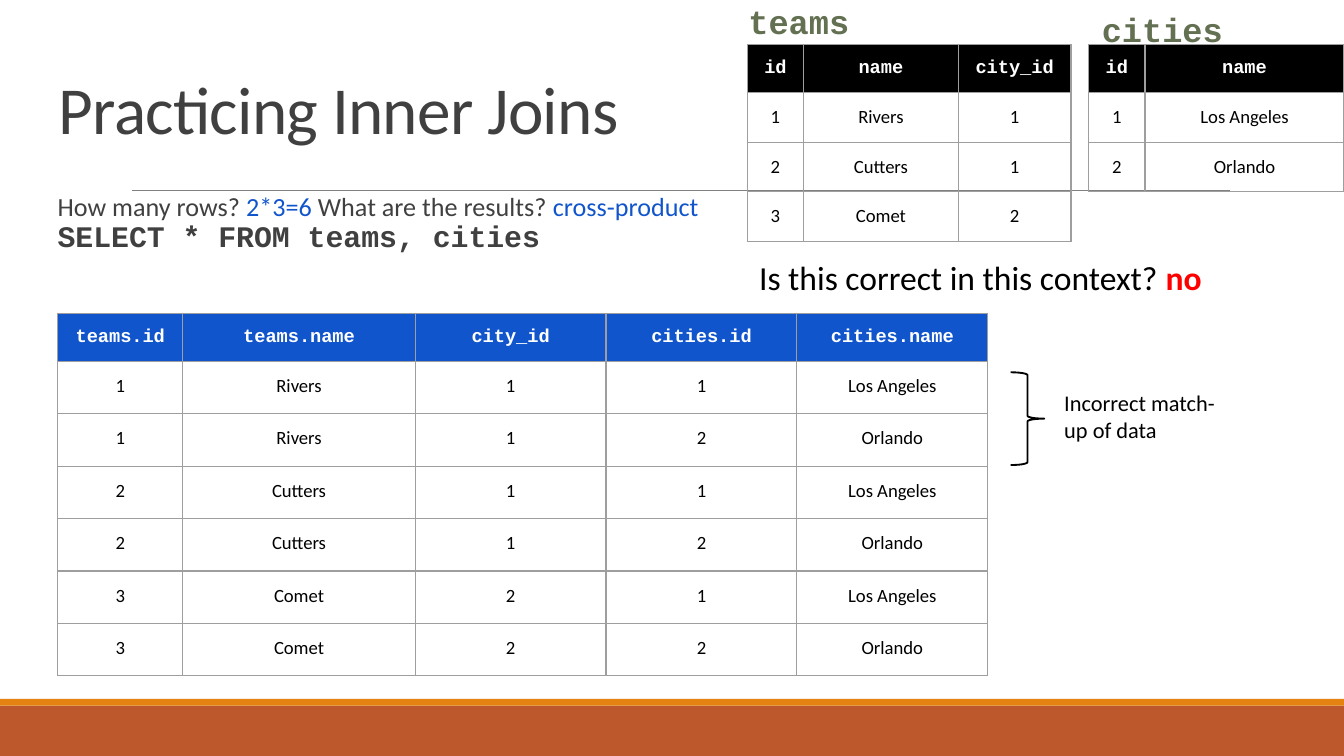
"""Build the slide on inner joins and cross products."""
from lxml import etree
from pptx import Presentation
from pptx import util as u
from pptx.dml.color import RGBColor
from pptx.enum import shapes, text
from pptx.oxml import parse_xml
from pptx.oxml.ns import nsdecls, qn

SANS, MONO = "Calibri", "Courier New"
DARK, BLUE, GREEN, BLACK = "404040", "1155CC", "637052", "000000"


def style(font, size, name, color, bold=False):
    font.size, font.name, font.bold = u.Pt(size), name, bold
    font.color.rgb = RGBColor.from_string(color)


def add_text(box, runs, inset=0.1, indent=0, spacing=None):
    sp = s.shapes.add_textbox(*map(u.Inches, box))
    tf = sp.text_frame
    tf.word_wrap = True
    tf.margin_top = tf.margin_bottom = u.Inches(inset)
    p = tf.paragraphs[0]
    p.line_spacing = spacing
    if indent:
        p._p.get_or_add_pPr().set("marL", str(u.Inches(indent)))
    for words, *look in runs:
        r = p.add_run()
        r.text = words
        style(r.font, *look)
    return p


prs = Presentation()
prs.slide_width, prs.slide_height = u.Inches(10), u.Inches(10) * 9 // 16
s = prs.slides.add_slide(prs.slide_layouts[6])

for top, height, color in [(5.25, 0.38, "BD582C"), (5.2, 0.05, "E48312")]:
    sp = s.shapes.add_shape(shapes.MSO_SHAPE.RECTANGLE, 0, u.Inches(top),
                            u.Inches(10), u.Inches(height))
    sp.shadow.inherit = False
    sp.fill.solid()
    sp.fill.fore_color.rgb = RGBColor.from_string(color)
    sp.line.fill.background()

rule = s.shapes.add_connector(shapes.MSO_CONNECTOR.STRAIGHT, u.Inches(0.98),
                              u.Inches(1.42), u.Inches(9.15), u.Inches(1.42))
rule.line.color.rgb = RGBColor.from_string("808080")
rule.line.width = u.Pt(0.5)
etree.SubElement(rule._element.spPr, qn("a:effectLst"))

teams = [("1", "Rivers", "1"), ("2", "Cutters", "1"), ("3", "Comet", "2")]
cities = [("1", "Los Angeles"), ("2", "Orlando")]
cross = [team + city for team in teams for city in cities]
tables = [
    (0.43, 2.33, [0.93, 1.73, 1.42, 1.42, 1.42], 0.39, BLUE,
     ("teams.id", "teams.name", "city_id", "cities.id", "cities.name"), cross),
    (5.56, 0.33, [0.42, 1.15, 0.84], 0.36, BLACK,
     ("id", "name", "city_id"), teams),
    (8.1, 0.33, [0.42, 1.48], 0.36, BLACK, ("id", "name"), cities),
]
for left, top, widths, row_height, color, head, body in tables:
    rows = [head] + body
    heights = [0.36] + [row_height] * len(body)
    table = s.shapes.add_table(
        len(rows), len(widths), u.Inches(left), u.Inches(top),
        u.Inches(sum(widths)), u.Inches(sum(heights))).table
    table.first_row = table.horz_banding = False
    for column, width in zip(table.columns, widths):
        column.width = u.Inches(width)
    for i, row in enumerate(rows):
        table.rows[i].height = u.Inches(heights[i])
        for j, value in enumerate(row):
            cell = table.cell(i, j)
            cell.margin_left = cell.margin_right = u.Inches(0.1)
            cell.margin_top = cell.margin_bottom = u.Inches(0.1)
            for side in "LRTB":
                cell._tc.get_or_add_tcPr().append(parse_xml(
                    f'<a:ln{side} {nsdecls("a")} w="{u.Pt(0.75)}"><a:solidFill>'
                    f'<a:srgbClr val="9E9E9E"/></a:solidFill></a:ln{side}>'))
            cell.text_frame.text = value
            p = cell.text_frame.paragraphs[0]
            p.alignment = text.PP_ALIGN.CENTER
            if i == 0:
                cell.fill.solid()
                cell.fill.fore_color.rgb = RGBColor.from_string(color)
                style(p.runs[0].font, 10, MONO, "FFFFFF", True)
            else:
                cell.fill.background()
                style(p.runs[0].font, 10, SANS, BLACK)

title = add_text((0.34, 0.49, 9.32, 0.63),
                 [("Practicing Inner Joins", 36, SANS, DARK)], spacing=0.85)
title.runs[0].font._element.set("spc", "-40")

add_text((0.18, 1.34, 5.29, 0.86), [
    ("How many rows? ", 14, SANS, DARK),
    ("2*3=6 ", 14, SANS, BLUE),
    ("What are the results? ", 14, SANS, DARK),
    ("cross-product\t", 14, SANS, BLUE),
    ("SELECT * FROM teams, cities", 16, MONO, DARK, True),
], indent=0.15, spacing=0.9)

for name, box in [("teams", (5.47, -0.14, 1.45, 0.41)),
                  ("cities", (8.1, -0.08, 1.34, 0.5))]:
    p = add_text(box, [(name, 18, MONO, GREEN, True)], spacing=1.15)
    p.space_after = u.Pt(16)

add_text((5.4, 1.86, 5.01, 0.4), [
    ("Is this correct in this context? ", 18, SANS, BLACK),
    ("no", 18, SANS, "FF0000", True),
], inset=0.05, indent=0.15)

brace = s.shapes.add_shape(shapes.MSO_SHAPE.RIGHT_BRACE, u.Inches(7.52),
                           u.Inches(2.77), u.Inches(0.25), u.Inches(0.69))
brace.shadow.inherit = False
brace.fill.background()
brace.line.color.rgb = RGBColor.from_string(BLACK)
brace.line.width = u.Pt(1)

add_text((7.82, 2.85, 1.41, 0.5),
         [("Incorrect match-up of data", 12, SANS, BLACK)], inset=0.05)

prs.save("out.pptx")
